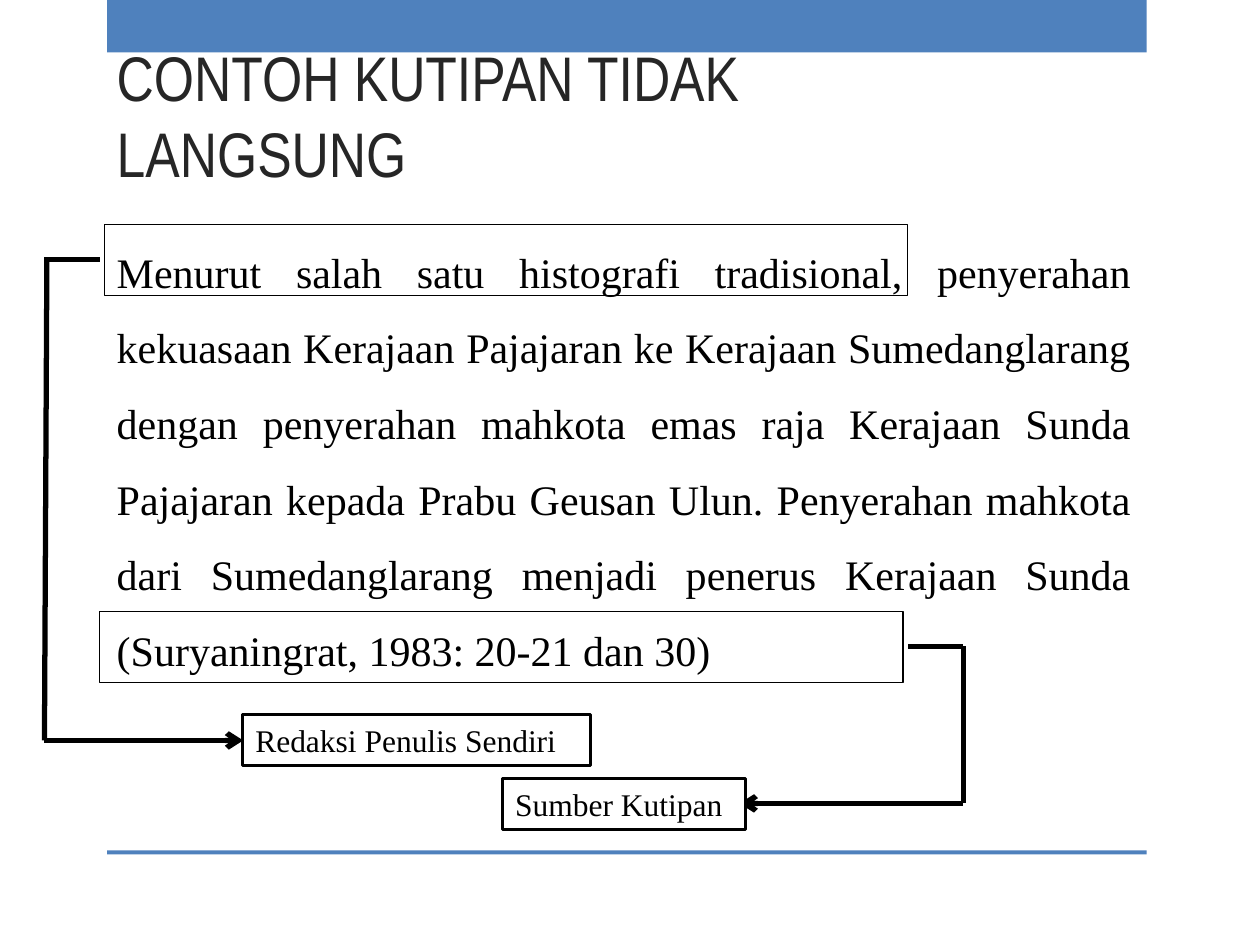
from dataclasses import dataclass
from typing import Any, Optional

import pptx
import pptx.dml.color
import pptx.enum.shapes
import pptx.enum.text
import pptx.oxml.ns
import pptx.util
from lxml import etree

BLUE = pptx.dml.color.RGBColor(0x4F, 0x81, 0xBD)
BLACK = pptx.dml.color.RGBColor(0, 0, 0)
WHITE = pptx.dml.color.RGBColor(0xFF, 0xFF, 0xFF)
CHARCOAL = pptx.dml.color.RGBColor(0x26, 0x26, 0x26)

SERIF = "Times New Roman"
LEFT = pptx.enum.text.PP_ALIGN.LEFT
JUSTIFY = pptx.enum.text.PP_ALIGN.JUSTIFY
TOP = pptx.enum.text.MSO_ANCHOR.TOP
BOTTOM = pptx.enum.text.MSO_ANCHOR.BOTTOM
NO_FIT = pptx.enum.text.MSO_AUTO_SIZE.NONE
GROW = pptx.enum.text.MSO_AUTO_SIZE.SHAPE_TO_FIT_TEXT

TITLE = "CONTOH KUTIPAN TIDAK LANGSUNG"
BODY = (
    "Menurut salah satu histografi tradisional, penyerahan kekuasaan Kerajaan "
    "Pajajaran ke Kerajaan Sumedanglarang dengan penyerahan mahkota emas raja "
    "Kerajaan Sunda Pajajaran kepada Prabu Geusan Ulun. Penyerahan mahkota dari "
    "Sumedanglarang menjadi penerus Kerajaan Sunda "
    "(Suryaningrat, 1983: 20-21 dan 30)"
)


@dataclass
class Box:
    left: float
    top: float
    width: float
    height: float
    fill: Optional[pptx.dml.color.RGBColor] = None
    line_width: float = 0
    text: str = ""


@dataclass
class Segment:
    start: tuple[float, float]
    end: tuple[float, float]
    arrow: bool = False


BARS = [Box(61.2, 0, 594, 30, BLUE), Box(61.2, 486, 594, 2.2, BLUE)]
FRAMES = [
    Box(59.6, 128.3, 459.2, 40.5, line_width=0.75),
    Box(56.9, 349.4, 459.2, 40.5, line_width=0.75),
]
SEGMENTS = [
    Segment((56.9, 148.3), (25.4, 148.3)),
    Segment((25.4, 423.1), (26.8, 148.3)),
    Segment((25.4, 423.1), (139, 423.1), arrow=True),
    Segment((550.4, 369.4), (518.6, 369.4)),
    Segment((550.4, 459.1), (550.4, 369.4)),
    Segment((550.4, 459.1), (422.6, 459.1), arrow=True),
]
LABELS = [
    Box(287.3, 445, 139, 29, WHITE, 1.75, "Sumber Kutipan"),
    Box(138.8, 408.4, 198.8, 29, WHITE, 1.75, "Redaksi Penulis Sendiri"),
]


def set_format(target: Any, values: dict[str, Any]) -> None:
    for name, value in values.items():
        setattr(target, name, value)


def geometry(box: Box) -> dict[str, Any]:
    return {
        name: pptx.util.Pt(getattr(box, name))
        for name in ("left", "top", "width", "height")
    }


def write_text(
    shape: Any,
    text: str,
    frame_format: dict[str, Any],
    paragraph_format: dict[str, Any],
    font_name: str,
    size: float,
    color: pptx.dml.color.RGBColor,
) -> None:
    frame = shape.text_frame
    frame.text = text
    set_format(frame, {"word_wrap": True, **frame_format})
    paragraph = frame.paragraphs[0]
    set_format(paragraph, {"space_before": pptx.util.Pt(0), **paragraph_format})
    font = paragraph.runs[0].font
    set_format(font, {"name": font_name, "size": pptx.util.Pt(size)})
    font.color.rgb = color


def remove_bullet(paragraph: Any) -> None:
    properties = paragraph._p.get_or_add_pPr()
    properties.set("marL", "0")
    properties.set("indent", "0")
    etree.SubElement(properties, pptx.oxml.ns.qn("a:buNone"))


def draw_box(slide: Any, box: Box) -> None:
    shape = slide.shapes.add_shape(
        pptx.enum.shapes.MSO_SHAPE.RECTANGLE, *geometry(box).values()
    )
    shape.shadow.inherit = False
    if box.fill is None:
        shape.fill.background()
    else:
        shape.fill.solid()
        shape.fill.fore_color.rgb = box.fill
    if box.line_width:
        shape.line.color.rgb = BLACK
        shape.line.width = pptx.util.Pt(box.line_width)
    else:
        shape.line.fill.background()
    if box.text:
        write_text(
            shape,
            box.text,
            {"vertical_anchor": TOP, "auto_size": GROW},
            {"alignment": LEFT},
            SERIF,
            18,
            BLACK,
        )


def draw_segment(slide: Any, segment: Segment) -> None:
    connector = slide.shapes.add_connector(
        pptx.enum.shapes.MSO_CONNECTOR.STRAIGHT,
        *(pptx.util.Pt(value) for value in segment.start + segment.end),
    )
    connector.line.color.rgb = BLACK
    connector.line.width = pptx.util.Pt(3)
    if segment.arrow:
        line = connector.line._get_or_add_ln()
        etree.SubElement(line, pptx.oxml.ns.qn("a:tailEnd"), type="arrow")
    etree.SubElement(connector._element.spPr, pptx.oxml.ns.qn("a:effectLst"))


def main() -> None:
    presentation = pptx.Presentation()
    set_format(
        presentation,
        {"slide_width": pptx.util.Pt(720), "slide_height": pptx.util.Pt(540)},
    )
    slide = presentation.slides.add_slide(presentation.slide_layouts[1])

    title = slide.shapes.title
    set_format(title, geometry(Box(59.5, 37.8, 534.2, 74.2)))
    write_text(
        title,
        TITLE,
        {"vertical_anchor": BOTTOM, "auto_size": NO_FIT},
        {"alignment": LEFT},
        "Arial Narrow",
        36,
        CHARCOAL,
    )

    body = slide.placeholders[1]
    set_format(body, geometry(Box(59.5, 122.7, 594, 306)))
    write_text(
        body,
        BODY,
        {"vertical_anchor": TOP, "auto_size": NO_FIT},
        {"alignment": JUSTIFY, "line_spacing": 1.5},
        SERIF,
        24,
        BLACK,
    )
    remove_bullet(body.text_frame.paragraphs[0])

    for box in BARS + FRAMES:
        draw_box(slide, box)
    for segment in SEGMENTS:
        draw_segment(slide, segment)
    for label in LABELS:
        draw_box(slide, label)

    presentation.save("out.pptx")


if __name__ == "__main__":
    main()
